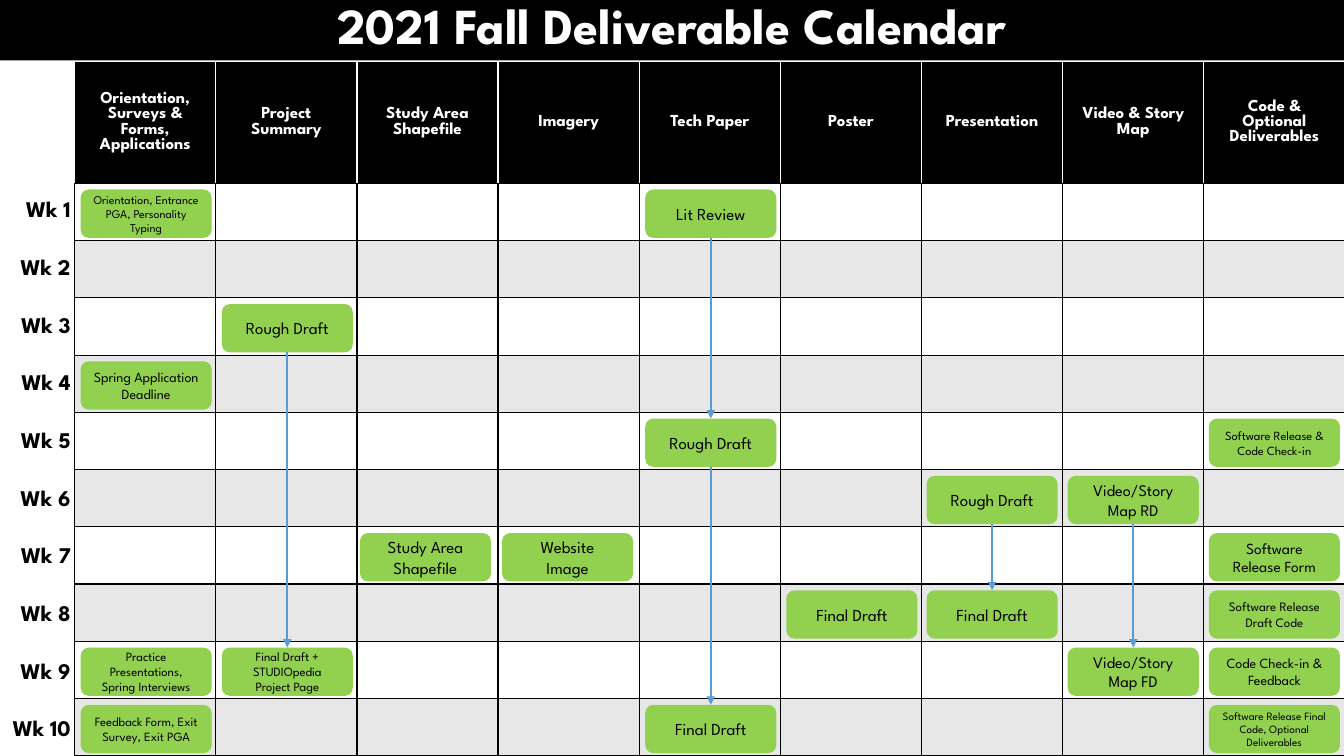
from pptx import Presentation
from pptx.dml.color import RGBColor
from pptx.enum.shapes import MSO_CONNECTOR, MSO_SHAPE
from pptx.enum.text import MSO_ANCHOR, MSO_AUTO_SIZE, PP_ALIGN
from pptx.oxml import parse_xml
from pptx.oxml.ns import nsdecls, qn
from pptx.util import Inches, Pt

TITLE = "2021 Fall Deliverable Calendar"
DELIVERABLES = [
    "Orientation, Surveys & Forms, Applications", "Project Summary",
    "Study Area Shapefile", "Imagery", "Tech Paper", "Poster",
    "Presentation", "Video & Story Map", "Code & Optional Deliverables",
]
WEEK_COUNT = 10
# (deliverable column, week): (text, font size)
MILESTONES = {
    (0, 1): ("Orientation, Entrance PGA, Personality Typing", 8.5),
    (0, 4): ("Spring Application Deadline", 10),
    (0, 9): ("Practice Presentations, Spring Interviews", 9),
    (0, 10): ("Feedback Form, Exit Survey, Exit PGA", 9),
    (1, 3): ("Rough Draft", 12),
    (1, 9): ("Final Draft + STUDIOpedia Project Page", 9),
    (2, 7): ("Study Area Shapefile", 12),
    (3, 7): ("Website\nImage", 12),
    (4, 1): ("Lit Review", 12),
    (4, 5): ("Rough Draft", 12),
    (4, 10): ("Final Draft", 12),
    (5, 8): ("Final Draft", 12),
    (6, 6): ("Rough Draft", 12),
    (6, 8): ("Final Draft", 12),
    (7, 6): ("Video/Story Map RD", 11.5),
    (7, 9): ("Video/Story Map FD", 11.5),
    (8, 5): ("Software Release & Code Check-in", 8.9),
    (8, 7): ("Software Release Form", 11),
    (8, 8): ("Software Release Draft Code", 9.2),
    (8, 9): ("Code Check-in & Feedback", 10),
    (8, 10): ("Software Release Final Code, Optional Deliverables", 8),
}
# (deliverable column, from week, to week)
ARROWS = [(1, 3, 9), (4, 1, 5), (4, 5, 10), (6, 6, 8), (7, 6, 9)]
NARROW_INSET_CARD = (8, 10)

BLACK = RGBColor(0x00, 0x00, 0x00)
WHITE = RGBColor(0xFF, 0xFF, 0xFF)
GREY = RGBColor(0xE7, 0xE7, 0xE7)
GREEN = RGBColor(0x92, 0xD0, 0x50)
BLUE = RGBColor(0x5B, 0x9B, 0xD5)
FONT = "League Spartan"
CENTER, RIGHT = PP_ALIGN.CENTER, PP_ALIGN.RIGHT
MIDDLE = MSO_ANCHOR.MIDDLE

SLIDE_W, SLIDE_H = 13.33, 7.5
GRID_LEFT, GRID_TOP = 0.74, 0.61
COLUMN_W, HEADER_H = 1.4, 1.21
WEEK_H = (SLIDE_H - GRID_TOP - HEADER_H) / WEEK_COUNT
CARD_W, CARD_H = 1.3, 0.48
CARD_LEFTS = [0.8, 2.2, 3.57, 4.98, 6.4, 7.8, 9.19, 10.59, 11.99]
FIRST_CARD_TOP = 1.88
CARD_TOP_SITE, CARD_BOTTOM_SITE = 0, 2


def write(frame, text, size, color, align=CENTER, bold=False, **spacing):
    frame.text = text
    for paragraph in frame.paragraphs:
        for key, value in {"alignment": align, **spacing}.items():
            setattr(paragraph, key, value)
        font_format = {"name": FONT, "size": Pt(size), "bold": bold}
        for run in paragraph.runs:
            for key, value in font_format.items():
                setattr(run.font, key, value)
            run.font.color.rgb = color


def fill(part, color):
    part.fill.solid()
    part.fill.fore_color.rgb = color


def set_borders(cell, colors):
    """Give a cell 1 pt borders, colours in the order left, right, top, bottom."""
    properties = cell._tc.get_or_add_tcPr()
    for index, (side, color) in enumerate(zip("LRTB", colors)):
        properties.insert(index, parse_xml(
            f'<a:ln{side} {nsdecls("a")} w="12700"><a:solidFill>'
            f'<a:srgbClr val="{color}"/></a:solidFill></a:ln{side}>'))


def add_title(slide):
    title = slide.shapes.title
    box = {"left": 0, "top": -0.05, "width": SLIDE_W, "height": 0.65}
    for key, value in box.items():
        setattr(title, key, Inches(value))
    fill(title, BLACK)
    frame = title.text_frame
    frame.auto_size = MSO_AUTO_SIZE.NONE
    frame.vertical_anchor = MIDDLE
    write(frame, TITLE, 36, WHITE, bold=True, line_spacing=0.9)


def add_grid(slide):
    column_count = len(DELIVERABLES)
    table = slide.shapes.add_table(
        WEEK_COUNT + 1, column_count, Inches(GRID_LEFT), Inches(GRID_TOP),
        Inches(COLUMN_W * column_count), Inches(SLIDE_H - GRID_TOP)).table
    for column in table.columns:
        column.width = Inches(COLUMN_W)
    for week, row in enumerate(table.rows):
        row.height = Inches(WEEK_H if week else HEADER_H)
        for column, cell in enumerate(row.cells):
            if week:
                fill(cell, WHITE if week % 2 else GREY)
                set_borders(cell, [BLACK] * 4)
            else:
                fill(cell, BLACK)
                set_borders(cell, [WHITE, WHITE, WHITE, BLACK])
                cell.vertical_anchor = MIDDLE
                write(cell.text_frame, DELIVERABLES[column], 12, WHITE, bold=True)


def add_week_labels(slide):
    labels = slide.shapes.add_textbox(
        Inches(-0.05), Inches(1.89), Inches(0.85), Inches(5.57)).text_frame
    labels.word_wrap = False
    weeks = "\n".join(f"Wk {week}" for week in range(1, WEEK_COUNT + 1))
    write(labels, weeks, 16, BLACK, RIGHT, True, space_after=Pt(22))


def add_card(slide, column, week):
    text, size = MILESTONES[column, week]
    top = FIRST_CARD_TOP + WEEK_H * (week - 1)
    card = slide.shapes.add_shape(
        MSO_SHAPE.ROUNDED_RECTANGLE, Inches(CARD_LEFTS[column]), Inches(top),
        Inches(CARD_W), Inches(CARD_H))
    card.shadow.inherit = False
    fill(card, GREEN)
    card.line.fill.background()
    frame = card.text_frame
    frame.word_wrap = True
    frame.vertical_anchor = MIDDLE
    if (column, week) == NARROW_INSET_CARD:
        frame.margin_left = frame.margin_right = 0
    write(frame, text, size, BLACK)
    return card


def add_arrow(slide, start_card, end_card):
    arrow = slide.shapes.add_connector(MSO_CONNECTOR.STRAIGHT, 0, 0, 0, 0)
    arrow.begin_connect(start_card, CARD_BOTTOM_SITE)
    arrow.end_connect(end_card, CARD_TOP_SITE)
    arrow.line.color.rgb = BLUE
    arrow.line.width = Pt(1.5)
    properties = arrow._element.spPr
    properties.find(qn("a:ln")).append(
        parse_xml(f'<a:tailEnd {nsdecls("a")} type="triangle"/>'))
    properties.append(parse_xml(f'<a:effectLst {nsdecls("a")}/>'))


def main():
    deck = Presentation()
    deck.slide_width, deck.slide_height = Inches(SLIDE_W), Inches(SLIDE_H)
    slide = deck.slides.add_slide(deck.slide_layouts.get_by_name("Title Only"))
    add_title(slide)
    add_grid(slide)
    add_week_labels(slide)
    cards = {place: add_card(slide, *place) for place in MILESTONES}
    for column, start_week, end_week in ARROWS:
        add_arrow(slide, cards[column, start_week], cards[column, end_week])
    deck.save("out.pptx")


if __name__ == "__main__":
    main()
